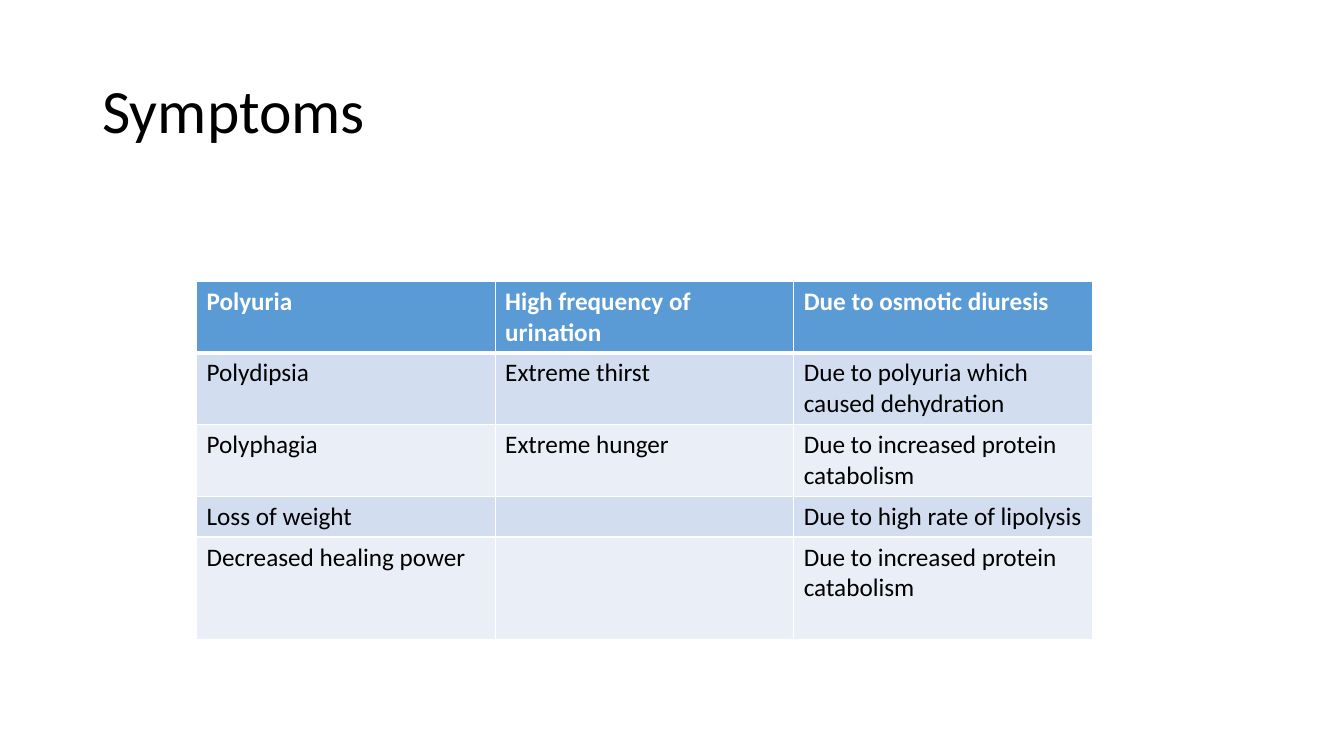
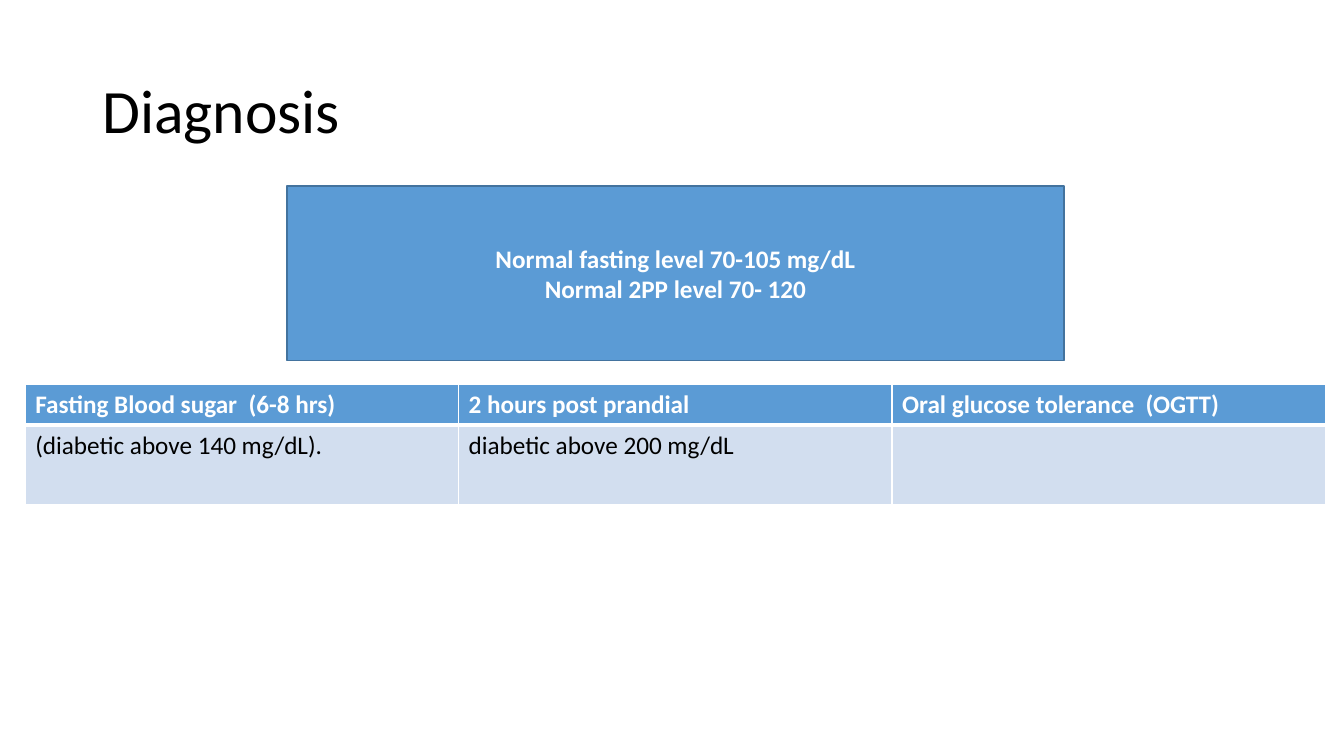
import pptx
import pptx.dml.color
import pptx.enum.shapes
import pptx.enum.text
import pptx.oxml
import pptx.oxml.ns
import pptx.util

Pt = pptx.util.Pt
PP_ALIGN = pptx.enum.text.PP_ALIGN
MIDDLE = pptx.enum.text.MSO_ANCHOR.MIDDLE

WHITE, BLACK = "FFFFFF", "000000"
BLUE, DARK_BLUE = "5B9BD5", "43739E"
BANDS = ["D2DEEF", "EAEFF7"]

TITLE_BOX = (66, 28.8, 828, 104.4)
TITLE = {"name": "Calibri", "size": Pt(44), "bold": False}
STRONG = {"name": "Calibri", "size": Pt(18), "bold": True}
BODY = {"name": "Calibri", "size": Pt(18), "bold": False}

SYMPTOMS = [
    ["Polyuria", "High frequency of urination", "Due to osmotic diuresis"],
    ["Polydipsia", "Extreme thirst", "Due to polyuria which caused dehydration"],
    ["Polyphagia", "Extreme hunger", "Due to increased protein catabolism"],
    ["Loss of weight", "", "Due to high rate of lipolysis"],
    ["Decreased healing power", "", "Due to increased protein catabolism"],
]
TESTS = [
    ["Fasting Blood sugar  (6-8 hrs)", "2 hours post prandial",
     "Oral glucose tolerance  (OGTT)"],
    ["(diabetic above 140 mg/dL).", "diabetic above 200 mg/dL", ""],
]
NORMAL_LEVELS = ["Normal fasting level 70-105 mg/dL", "Normal 2PP level 70- 120"]


def rgb(hex_color):
    return pptx.dml.color.RGBColor.from_string(hex_color)


def points(box):
    return [Pt(length) for length in box]


def write(frame, lines, style, color, **paragraph_format):
    """Fill a text frame with one paragraph per line, all in one style."""
    frame.text = "\n".join(lines)
    for paragraph in frame.paragraphs:
        for key, value in paragraph_format.items():
            setattr(paragraph, key, value)
        for key, value in style.items():
            setattr(paragraph.font, key, value)
        paragraph.font.color.rgb = rgb(color)


def add_titled_slide(deck, heading):
    slide = deck.slides.add_slide(deck.slide_layouts[5])
    title = slide.shapes.title
    title.left, title.top, title.width, title.height = points(TITLE_BOX)
    write(title.text_frame, [heading], TITLE, BLACK,
          alignment=PP_ALIGN.LEFT, line_spacing=0.9)
    title.text_frame.vertical_anchor = MIDDLE
    return slide


def add_borders(cell, widths):
    """Draw white cell borders; widths maps each side (L, R, T, B) to points."""
    properties = cell._tc.get_or_add_tcPr()
    for side, width in widths.items():
        properties.append(pptx.oxml.parse_xml(
            f'<a:ln{side} {pptx.oxml.ns.nsdecls("a")} w="{Pt(width)}">'
            f'<a:solidFill><a:srgbClr val="{WHITE}"/></a:solidFill></a:ln{side}>'))


def add_banded_table(slide, box, rows, heights):
    frame = slide.shapes.add_table(len(rows), len(rows[0]), *points(box))
    table = frame.table
    for column in table.columns:
        column.width = Pt(box[2] / len(rows[0]))
    for index, (texts, height) in enumerate(zip(rows, heights)):
        table.rows[index].height = Pt(height)
        header = index == 0
        fill = BLUE if header else BANDS[(index - 1) % len(BANDS)]
        style, color = (STRONG, WHITE) if header else (BODY, BLACK)
        widths = {"L": 1, "R": 1, "T": 3 if index == 1 else 1, "B": 3 if header else 1}
        for cell, text in zip(table.rows[index].cells, texts):
            add_borders(cell, widths)
            cell.fill.solid()
            cell.fill.fore_color.rgb = rgb(fill)
            write(cell.text_frame, [text], style, color)


def add_callout(slide, box, lines):
    callout = slide.shapes.add_shape(
        pptx.enum.shapes.MSO_SHAPE.RECTANGLE, *points(box))
    callout.shadow.inherit = False
    callout.fill.solid()
    callout.fill.fore_color.rgb = rgb(BLUE)
    callout.line.color.rgb = rgb(DARK_BLUE)
    callout.line.width = Pt(1)
    callout.text_frame.vertical_anchor = MIDDLE
    write(callout.text_frame, lines, STRONG, WHITE, alignment=PP_ALIGN.CENTER)


def build_symptoms(deck):
    slide = add_titled_slide(deck, "Symptoms")
    add_banded_table(slide, (140.4, 200.9, 639.9, 255), SYMPTOMS, [51, 51, 51, 29, 73])


def build_diagnosis(deck):
    slide = add_titled_slide(deck, "Diagnosis")
    add_banded_table(slide, (18, 274.5, 928.8, 86), TESTS, [29, 57])
    add_callout(slide, (205, 133, 555, 124.5), NORMAL_LEVELS)


def main():
    deck = pptx.Presentation()
    deck.slide_width, deck.slide_height = Pt(960), Pt(540)
    build_symptoms(deck)
    build_diagnosis(deck)
    deck.save("out.pptx")


if __name__ == "__main__":
    main()
